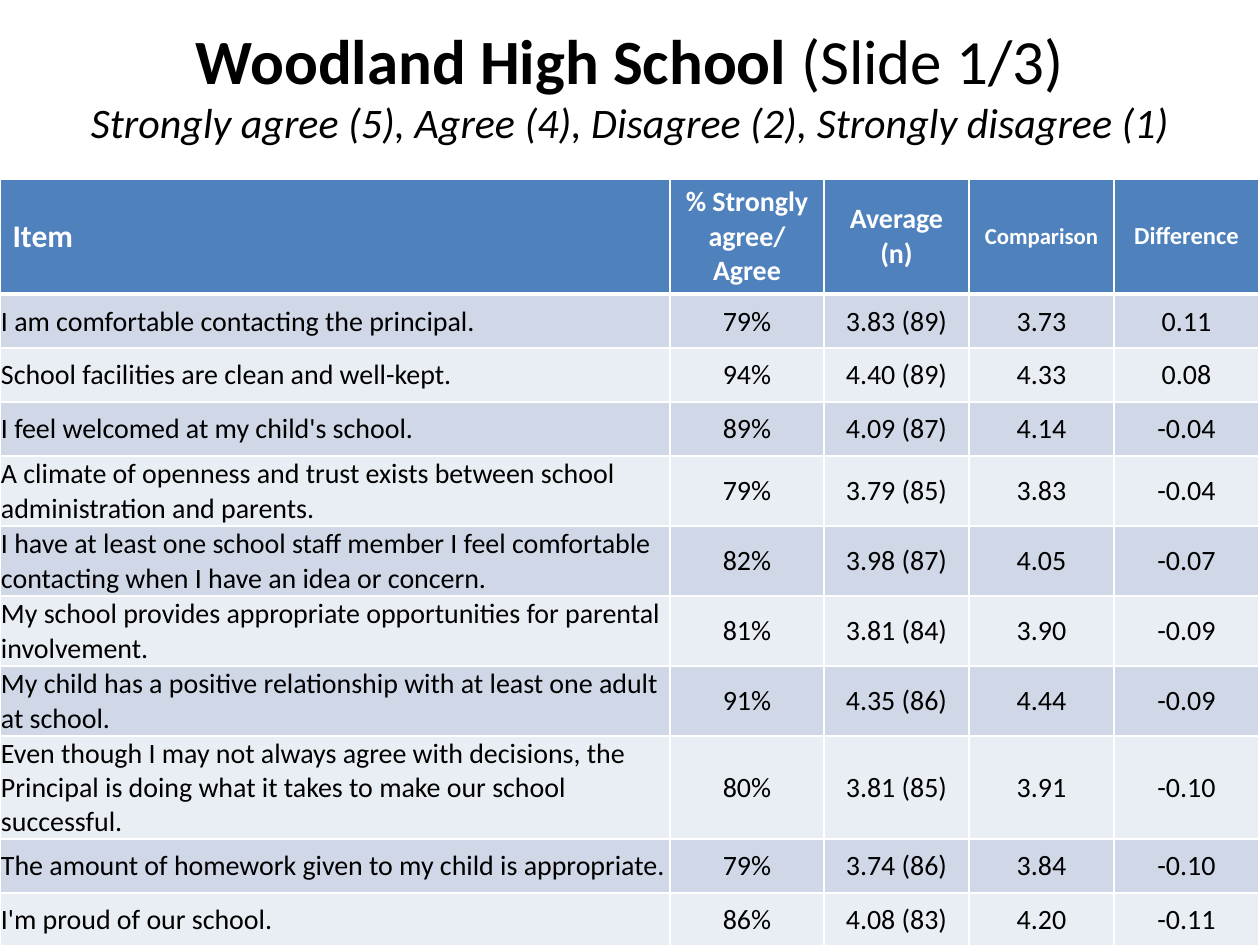
from dataclasses import dataclass

from lxml import etree
from pptx import Presentation
from pptx import util as u
from pptx.dml.color import RGBColor
from pptx.enum import text
from pptx.oxml.ns import qn

TITLE = "Woodland High School "
PART = "(Slide 1/3)"
SCALE = "Strongly agree (5), Agree (4), Disagree (2), Strongly disagree (1)"

HEADERS = [
    ("Item", 18),
    ("% Strongly agree/ Agree", 16),
    ("Average (n)", 16),
    ("Comparison", 13),
    ("Difference", 14),
]
ITEMS = [
    (1, "I am comfortable contacting the principal.", "79%", "3.83 (89)", "3.73", "0.11"),
    (1, "School facilities are clean and well-kept.", "94%", "4.40 (89)", "4.33", "0.08"),
    (1, "I feel welcomed at my child's school.", "89%", "4.09 (87)", "4.14", "-0.04"),
    (2, "A climate of openness and trust exists between school administration and parents.",
     "79%", "3.79 (85)", "3.83", "-0.04"),
    (2, "I have at least one school staff member I feel comfortable contacting when I have "
        "an idea or concern.", "82%", "3.98 (87)", "4.05", "-0.07"),
    (2, "My school provides appropriate opportunities for parental involvement.",
     "81%", "3.81 (84)", "3.90", "-0.09"),
    (2, "My child has a positive relationship with at least one adult at school.",
     "91%", "4.35 (86)", "4.44", "-0.09"),
    (3, "Even though I may not always agree with decisions, the Principal is doing what it "
        "takes to make our school successful.", "80%", "3.81 (85)", "3.91", "-0.10"),
    (1, "The amount of homework given to my child is appropriate.",
     "79%", "3.74 (86)", "3.84", "-0.10"),
    (1, "I'm proud of our school.", "86%", "4.08 (83)", "4.20", "-0.11"),
]
WIDTH, HEIGHT = 1260, 945
TITLE_HEIGHT = 168
TABLE_TOP = 179
COLUMNS = [670, 154, 145, 145, 145]
HEADER_HEIGHT = 115
ROW_HEIGHTS = {1: 54, 2: 70, 3: 103}


@dataclass(frozen=True)
class Theme:
    font: str = "Calibri"
    ink: str = "000000"
    white: str = "FFFFFF"
    header: str = "4F81BD"
    bands: tuple = ("D0D8E8", "E9EDF4")
    title: int = 36
    subtitle: int = 24
    body: int = 16
    rule: int = 1
    header_rule: int = 3


T = Theme()


def px(n):
    return u.Emu(n * 914400 // 126)


def style(r, size, color, bold=False, italic=False):
    f = r.font
    f.name, f.size, f.bold, f.italic = T.font, u.Pt(size), bold, italic
    f.color.rgb = RGBColor.from_string(color)


def add_borders(cell, top, bottom):
    props = cell._tc.get_or_add_tcPr()
    for side, width in (("L", T.rule), ("R", T.rule), ("T", top), ("B", bottom)):
        ln = etree.SubElement(props, qn("a:ln" + side), w=str(u.Pt(width)))
        fill = etree.SubElement(ln, qn("a:solidFill"))
        etree.SubElement(fill, qn("a:srgbClr"), val=T.white)


def fill_cell(cell, value, col, size, color, bold, fill, top, bottom):
    add_borders(cell, top, bottom)
    cell.fill.solid()
    cell.fill.fore_color.rgb = RGBColor.from_string(fill)
    cell.vertical_anchor = text.MSO_ANCHOR.MIDDLE
    cell.text_frame.text = value
    p = cell.text_frame.paragraphs[0]
    p.alignment = text.PP_ALIGN.CENTER if col else text.PP_ALIGN.LEFT
    style(p.runs[0], size, color, bold)


def add_title(s):
    sp = s.shapes.add_textbox(0, 0, px(WIDTH), px(TITLE_HEIGHT))
    tf = sp.text_frame
    tf.word_wrap = True
    tf.vertical_anchor = text.MSO_ANCHOR.MIDDLE
    p = tf.paragraphs[0]
    p.alignment = text.PP_ALIGN.CENTER
    for value, size, bold, italic in (
        (TITLE, T.title, True, False),
        (PART, T.title, False, False),
        (SCALE, T.subtitle, False, True),
    ):
        if value == SCALE:
            p.add_line_break()
        r = p.add_run()
        r.text = value
        style(r, size, T.ink, bold, italic)


def add_survey(s):
    heights = [HEADER_HEIGHT] + [ROW_HEIGHTS[lines] for lines, *_ in ITEMS]
    table = s.shapes.add_table(
        len(heights), len(COLUMNS), 0, px(TABLE_TOP), px(sum(COLUMNS)), px(sum(heights))
    ).table
    for column, width in zip(table.columns, COLUMNS):
        column.width = px(width)
    for row, height in zip(table.rows, heights):
        row.height = px(height)
    for col, (label, size) in enumerate(HEADERS):
        fill_cell(table.cell(0, col), label, col, size, T.white, True,
                  T.header, T.rule, T.header_rule)
    for i, (_, *values) in enumerate(ITEMS):
        top = T.rule if i else T.header_rule
        for col, value in enumerate(values):
            cell = table.cell(i + 1, col)
            cell.margin_left = cell.margin_right = cell.margin_top = px(1)
            cell.margin_bottom = 0
            fill_cell(cell, value, col, T.body, T.ink, False,
                      T.bands[i % 2], top, T.rule)


def main():
    prs = Presentation()
    prs.slide_width, prs.slide_height = px(WIDTH), px(HEIGHT)
    s = prs.slides.add_slide(prs.slide_layouts[6])
    add_title(s)
    add_survey(s)
    prs.save("out.pptx")


if __name__ == "__main__":
    main()
